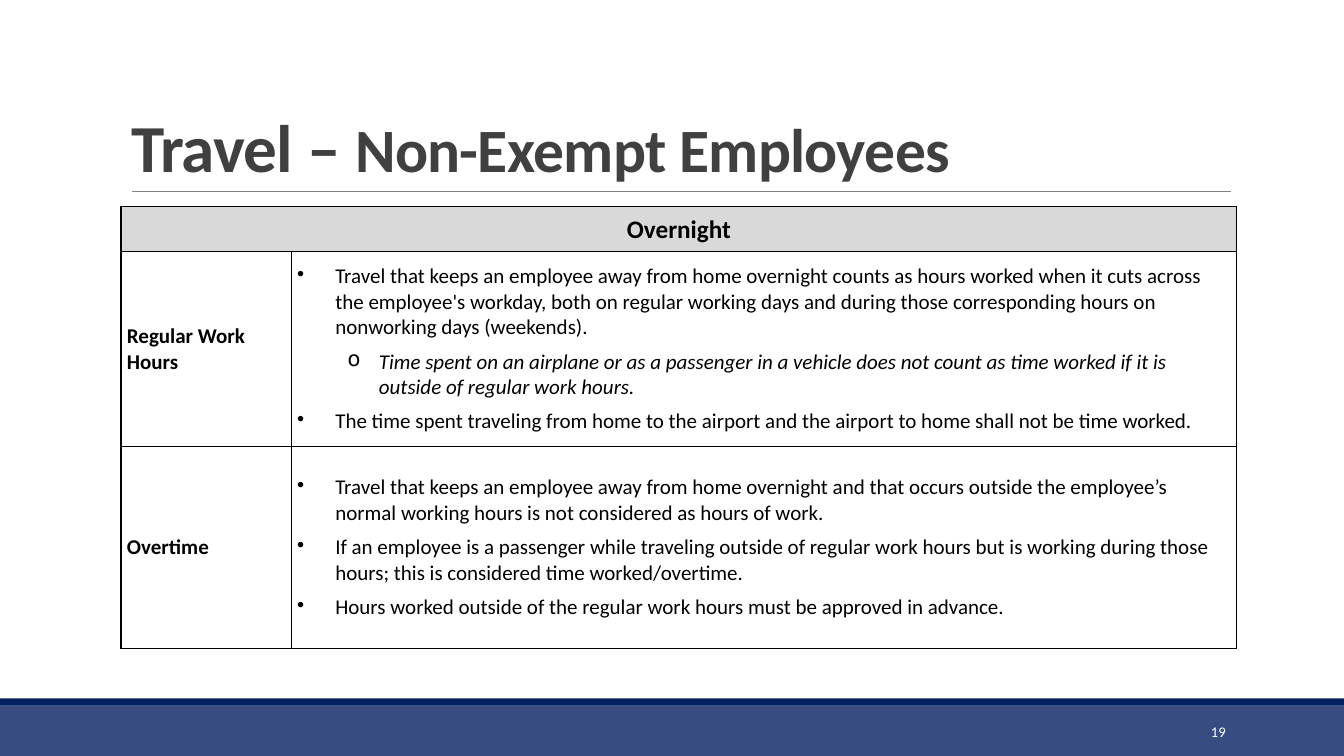
from lxml import etree
from pptx import Presentation
from pptx.dml.color import RGBColor
from pptx.enum.shapes import MSO_CONNECTOR, MSO_SHAPE
from pptx.enum.text import MSO_ANCHOR, MSO_AUTO_SIZE, PP_ALIGN
from pptx.oxml.ns import qn
from pptx.util import Cm, Pt

LEFT, CENTER, RIGHT = PP_ALIGN.LEFT, PP_ALIGN.CENTER, PP_ALIGN.RIGHT
MIDDLE, BOTTOM = MSO_ANCHOR.MIDDLE, MSO_ANCHOR.BOTTOM
RECT, STRAIGHT = MSO_SHAPE.RECTANGLE, MSO_CONNECTOR.STRAIGHT
NO_AUTOFIT = MSO_AUTO_SIZE.NONE
TITLE_ONLY = 5
WIDTH, HEIGHT = 33.87, 19.05

HEADING = "Overnight"
# Each section: row label, then (level, text) items
SECTIONS = [
    ("Regular Work Hours", [
        (0, "Travel that keeps an employee away from home overnight counts as hours "
            "worked when it cuts across the employee's workday, both on regular working "
            "days and during those corresponding hours on nonworking days (weekends)."),
        (1, "Time spent on an airplane or as a passenger in a vehicle does not count as "
            "time worked if it is outside of regular work hours."),
        (0, "The time spent traveling from home to the airport and the airport to home "
            "shall not be time worked."),
    ]),
    ("Overtime", [
        (0, "Travel that keeps an employee away from home overnight and that occurs "
            "outside the employee’s normal working hours is not considered as hours of work."),
        (0, "If an employee is a passenger while traveling outside of regular work hours "
            "but is working during those hours; this is considered time worked/overtime."),
        (0, "Hours worked outside of the regular work hours must be approved in advance."),
    ]),
]
# Bullet, left margin and hanging indent in cm, by level
BULLETS = [("•", 0.96, 0.96), ("o", 2.06, 0.79)]


def rgb(hex_color):
    return RGBColor.from_string(hex_color)


class Deck:
    font = "Calibri"
    black, white, gray = "000000", "FFFFFF", "D9D9D9"
    title_color, rule_color = "404040", "808080"
    navy, blue = "002060", "374C81"

    def __init__(self):
        self.prs = Presentation()
        self.prs.slide_width, self.prs.slide_height = Cm(WIDTH), Cm(HEIGHT)
        self.slide = self.prs.slides.add_slide(self.prs.slide_layouts[TITLE_ONLY])

    def style(self, p, size, color, bold=False, align=LEFT):
        p.alignment = align
        p.font.name, p.font.size, p.font.bold = self.font, Pt(size), bold
        p.font.color.rgb = rgb(color)

    def band(self, top, height, color):
        sp = self.slide.shapes.add_shape(RECT, 0, Cm(top), Cm(WIDTH), Cm(height))
        sp.shadow.inherit = False
        sp.fill.solid()
        sp.fill.fore_color.rgb = rgb(color)
        sp.line.fill.background()

    def rule(self, left, right, y):
        line = self.slide.shapes.add_connector(STRAIGHT, Cm(left), Cm(y), Cm(right), Cm(y))
        line.line.color.rgb = rgb(self.rule_color)
        line.line.width = Pt(0.5)
        etree.SubElement(line._element.spPr, qn("a:effectLst"))

    def title(self, parts, left, top, width, height):
        """Fill the title with (text, size) runs."""
        sp = self.slide.shapes.title
        sp.left, sp.top, sp.width, sp.height = Cm(left), Cm(top), Cm(width), Cm(height)
        tf = sp.text_frame
        tf.auto_size, tf.vertical_anchor = NO_AUTOFIT, BOTTOM
        p = tf.paragraphs[0]
        self.style(p, parts[0][1], self.title_color, bold=True)
        p.line_spacing = 0.85
        for text, size in parts:
            r = p.add_run()
            r.text, r.font.size = text, Pt(size)
            r._r.get_or_add_rPr().set("spc", "-50")

    def text(self, text, size, color, align, left, top, width, height):
        box = self.slide.shapes.add_textbox(Cm(left), Cm(top), Cm(width), Cm(height))
        tf = box.text_frame
        tf.word_wrap, tf.vertical_anchor = True, MIDDLE
        tf.text = text
        self.style(tf.paragraphs[0], size, color, align=align)

    def table(self, left, top, widths, heights):
        frame = self.slide.shapes.add_table(
            len(heights), len(widths), Cm(left), Cm(top), Cm(sum(widths)), Cm(sum(heights)))
        table = frame.table
        for column, width in zip(table.columns, widths):
            column.width = Cm(width)
        for row, height in zip(table.rows, heights):
            row.height = Cm(height)
        for cell in table.iter_cells():
            self.format_cell(cell)
        return table

    def format_cell(self, cell):
        cell.vertical_anchor = MIDDLE
        cell.margin_left = cell.margin_right = Cm(0.15)
        cell.margin_top = cell.margin_bottom = 0
        tcPr = cell._tc.get_or_add_tcPr()
        for side in ("a:lnL", "a:lnR", "a:lnT", "a:lnB"):
            ln = etree.SubElement(tcPr, qn(side), w=str(Pt(1)))
            fill = etree.SubElement(ln, qn("a:solidFill"))
            etree.SubElement(fill, qn("a:srgbClr"), val=self.black)
        cell.fill.solid()
        cell.fill.fore_color.rgb = rgb(self.white)

    def label(self, cell, text, size, align=LEFT):
        cell.text = text
        p = cell.text_frame.paragraphs[0]
        self.style(p, size, self.black, bold=True, align=align)
        return p

    def bullets(self, cell, items):
        tf = cell.text_frame
        for i, (level, text) in enumerate(items):
            p = tf.add_paragraph() if i else tf.paragraphs[0]
            p.text, p.level = text, level
            self.style(p, 15, self.black)
            p.font.italic = level > 0
            p.space_before = Pt(6)
            char, margin, hanging = BULLETS[level]
            pPr = p._p.get_or_add_pPr()
            pPr.set("marL", str(Cm(margin)))
            pPr.set("indent", str(-Cm(hanging)))
            bullet = etree.Element(qn("a:buChar"), char=char)
            pPr.find(qn("a:defRPr")).addprevious(bullet)


def main():
    deck = Deck()
    deck.band(17.78, 1.27, deck.blue)
    deck.band(17.6, 0.18, deck.navy)
    deck.rule(3.33, 31.01, 4.83)
    deck.title([("Travel – ", 48), ("Non-Exempt Employees", 44)], 3.05, 2.59, 29.21, 2.24)

    table = deck.table(3.05, 5.21, [4.29, 23.83], [1.12, 4.93, 5.08])
    heading = table.cell(0, 0)
    heading.merge(table.cell(0, 1))
    heading.fill.fore_color.rgb = rgb(deck.gray)
    deck.label(heading, HEADING, 18, CENTER).line_spacing = 1.07
    for row, (name, items) in enumerate(SECTIONS, start=1):
        deck.label(table.cell(row, 0), name, 15)
        deck.bullets(table.cell(row, 1), items)

    deck.text("19", 10.5, deck.white, RIGHT, 27.51, 17.93, 3.63, 1.02)
    deck.prs.save("out.pptx")


if __name__ == "__main__":
    main()
